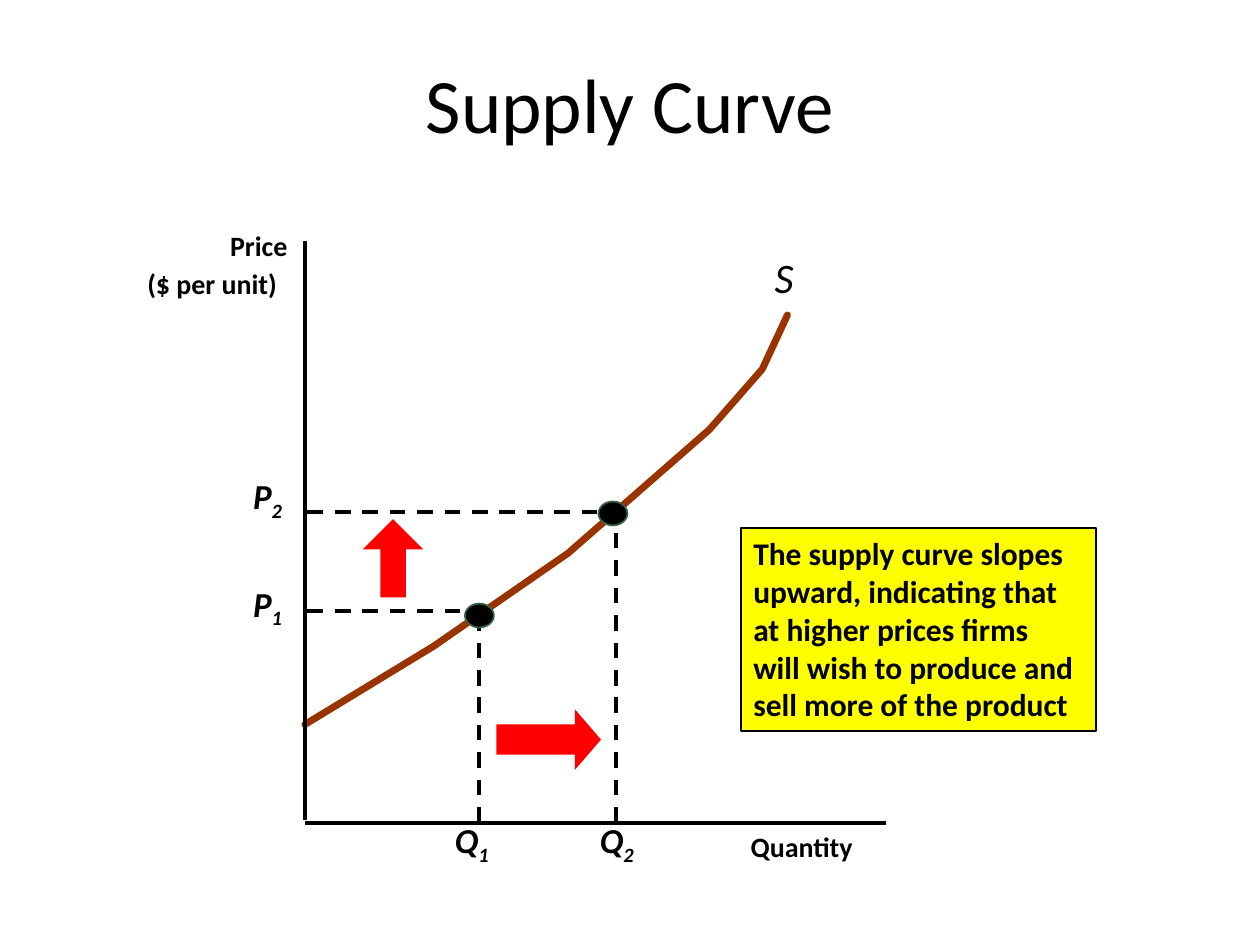
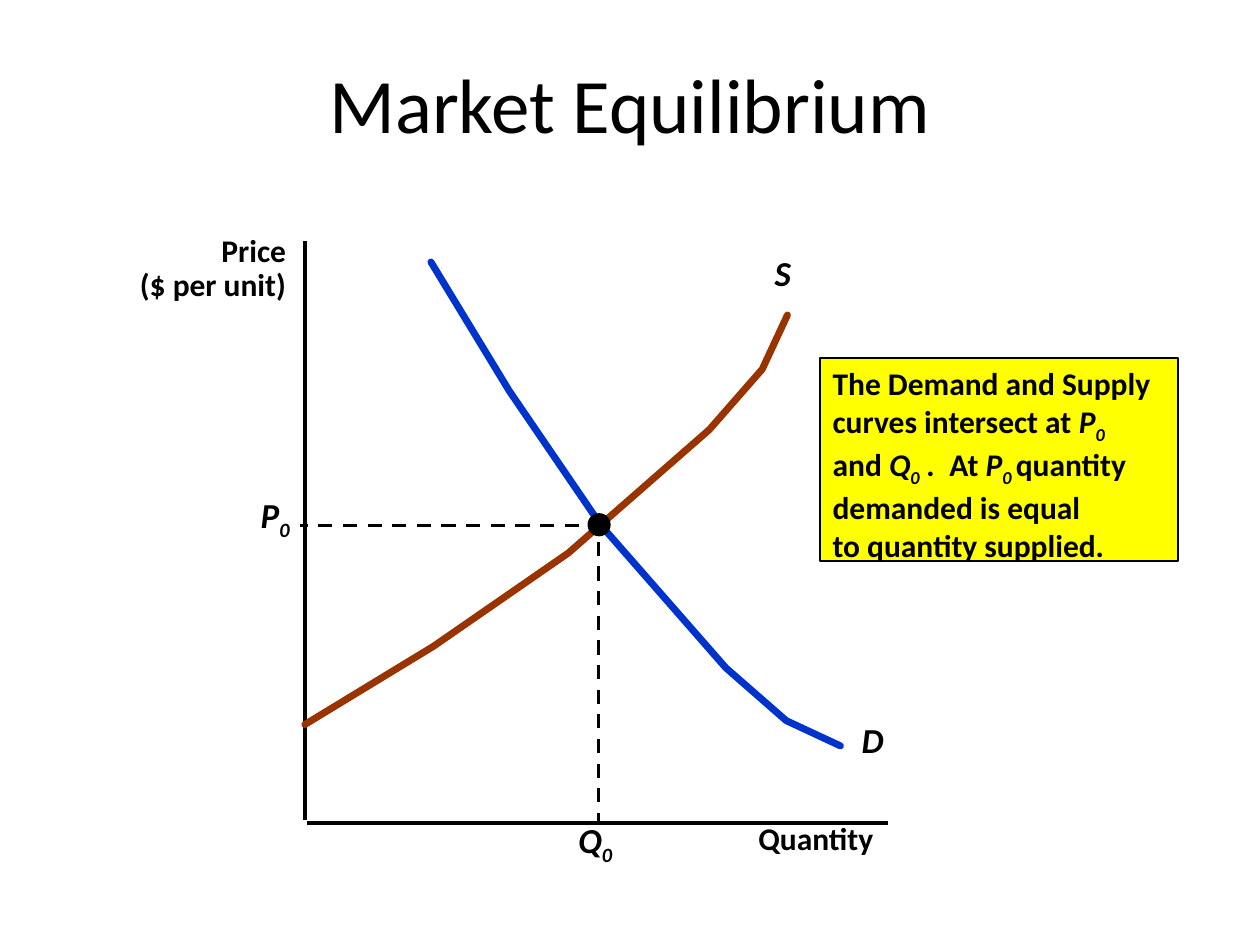
from dataclasses import dataclass

from lxml.etree import SubElement
from pptx import Presentation
from pptx.dml.color import RGBColor
from pptx.enum.dml import MSO_LINE
from pptx.enum.shapes import MSO_CONNECTOR, MSO_SHAPE
from pptx.enum.text import MSO_ANCHOR, MSO_AUTO_SIZE, PP_ALIGN
from pptx.oxml.ns import qn
from pptx.util import Inches, Pt

BLACK = RGBColor(0x00, 0x00, 0x00)
RED = RGBColor(0xFF, 0x00, 0x00)
YELLOW = RGBColor(0xFF, 0xFF, 0x00)
GREEN = RGBColor(0x37, 0x65, 0x46)
SUPPLY_BROWN = RGBColor(0x99, 0x33, 0x00)
DEMAND_BLUE = RGBColor(0x00, 0x33, 0xCC)

BODY = {"name": "Calibri", "size": Pt(18), "bold": True, "italic": False}
TITLE = BODY | {"size": Pt(44), "bold": False}
AXIS_SMALL = BODY | {"size": Pt(16)}
SYMBOL = BODY | {"size": Pt(20), "italic": True}
LIGHT_SYMBOL = SYMBOL | {"size": Pt(24), "bold": False}
SERIF_SPACE = (" ", {"name": "Times New Roman", "size": Pt(24), "bold": False})
VAR = {"italic": True}
SUB = {"italic": True, "baseline": "-25000"}

SUPPLY = [(0, 3.84), (1.02, 3.22), (2.09, 2.48), (3.21, 1.5), (3.63, 1.02), (3.83, 0.59)]
DEMAND = [(1, 0.17), (1.62, 1.19), (2.35, 2.26), (3.34, 3.39), (3.82, 3.81), (4.25, 4.01)]


@dataclass
class Box:
    left: float
    top: float
    width: float
    height: float

    def point(self, x, y):
        return Inches(self.left + x), Inches(self.top + y)

    def area(self, x, y, width, height):
        return *self.point(x, y), Inches(width), Inches(height)


TITLE_BOX = Box(0.5, 0.3, 9, 1.03)
GRAPH = Box(2.42, 1.91, 4.61, 4.62)


def write(frame, paragraphs, style, align=PP_ALIGN.LEFT, spacing=None):
    for index, runs in enumerate(paragraphs):
        paragraph = frame.paragraphs[0] if index == 0 else frame.add_paragraph()
        paragraph.alignment = align
        paragraph.line_spacing = spacing
        for text, changes in runs:
            run = paragraph.add_run()
            run.text = text
            run.font.color.rgb = BLACK
            for key, value in (style | changes).items():
                if key == "baseline":
                    run._r.get_or_add_rPr().set(key, value)
                else:
                    setattr(run.font, key, value)


def label(slide, place, paragraphs, style, align=PP_ALIGN.LEFT, spacing=None):
    frame = slide.shapes.add_textbox(*place).text_frame
    frame.word_wrap = False
    frame.auto_size = MSO_AUTO_SIZE.SHAPE_TO_FIT_TEXT
    write(frame, paragraphs, style, align, spacing)


def solid(slide, kind, place, fill, outline=None):
    shape = slide.shapes.add_shape(kind, *place)
    shape.shadow.inherit = False
    shape.fill.solid()
    shape.fill.fore_color.rgb = fill
    if outline is None:
        shape.line.fill.background()
    else:
        shape.line.color.rgb = outline
        shape.line.width = Pt(1)
    return shape


def straight(slide, box, start, end, weight, dash=None):
    line = slide.shapes.add_connector(
        MSO_CONNECTOR.STRAIGHT, *box.point(*start), *box.point(*end))
    SubElement(line._element.spPr, qn("a:effectLst"))
    line.line.color.rgb = BLACK
    line.line.width = Pt(weight)
    line.line.dash_style = dash


def axes(slide, box, gap=0):
    straight(slide, box, (0, 0), (0, box.height - 0.02), 2)
    straight(slide, box, (gap, box.height), (box.width + gap, box.height), 2)


def curve(slide, box, points, color):
    corners = [box.point(*point) for point in points]
    builder = slide.shapes.build_freeform(*corners[0])
    builder.add_line_segments(corners[1:], close=False)
    outline = builder.convert_to_shape()
    outline.shadow.inherit = False
    outline.fill.background()
    outline.line.color.rgb = color
    outline.line.width = Pt(4)
    outline.line._get_or_add_ln().set("cap", "rnd")


def callout(slide, box, paragraphs):
    note = solid(slide, MSO_SHAPE.RECTANGLE,
                 box.area(0, 0, box.width, box.height), YELLOW, BLACK)
    note.text_frame.word_wrap = True
    note.text_frame.vertical_anchor = MSO_ANCHOR.TOP
    write(note.text_frame, paragraphs, BODY)


def price_point(slide, box, index, guides, weight, dot, outline, price_at, quantity_x):
    for start, end in guides:
        straight(slide, box, start, end, weight, MSO_LINE.DASH)
    solid(slide, MSO_SHAPE.OVAL, box.area(*dot), BLACK, outline)
    label(slide, box.area(*price_at, 0.48, 0.43), [[("P", {}), (index, SUB)]], SYMBOL)
    label(slide, box.area(quantity_x, 4.54, 0.51, 0.43), [[("Q", {}), (index, SUB)]], SYMBOL)


def change_arrow(slide, box, kind, place, adjustments):
    arrow = solid(slide, kind, box.area(*place), RED)
    for index, value in enumerate(adjustments):
        arrow.adjustments[index] = value


def titled_slide(deck, text):
    slide = deck.slides.add_slide(deck.slide_layouts[5])
    title = slide.shapes.title
    box = TITLE_BOX
    title.left, title.top, title.width, title.height = box.area(0, 0, box.width, box.height)
    title.text_frame.vertical_anchor = MSO_ANCHOR.MIDDLE
    write(title.text_frame, [[(text, {})]], TITLE, PP_ALIGN.CENTER)
    return slide


def supply_slide(deck, box):
    slide = titled_slide(deck, "Supply Curve")
    curve(slide, box, SUPPLY, SUPPLY_BROWN)
    label(slide, box.area(3.63, 0.04, 0.42, 0.5), [[("S", {})]], LIGHT_SYMBOL)
    callout(slide, Box(5.88, 4.19, 2.82, 1.61), [[(line, {})] for line in (
        "The supply curve slopes", "upward, indicating that", "at higher prices firms",
        "will wish to produce and", "sell more of the product")])
    axes(slide, box)
    label(slide, box.area(3.44, 4.51, 1.18, 0.5),
          [[("Quantity", {}), SERIF_SPACE]], AXIS_SMALL)
    label(slide, box.area(-1.49, -0.09, 1.45, 0.64),
          [[("Price", {})], [("($ per unit)", {}), SERIF_SPACE]],
          AXIS_SMALL, PP_ALIGN.RIGHT, 0.8)
    price_point(slide, box, "1",
                [((0.02, 2.94), (1.46, 2.94)), ((1.38, box.height), (1.38, 2.98))],
                2.25, (1.27, 2.88, 0.23, 0.19), GREEN, (-0.51, 2.66), 1.09)
    price_point(slide, box, "2",
                [((0.02, 2.15), (2.52, 2.15)), ((2.47, box.height), (2.47, 2.12))],
                2.25, (2.33, 2.07, 0.23, 0.19), GREEN, (-0.51, 1.81), 2.24)
    change_arrow(slide, box, MSO_SHAPE.RIGHT_ARROW, (1.52, 3.72, 0.83, 0.48), (0.5, 0.43))
    change_arrow(slide, box, MSO_SHAPE.UP_ARROW, (0.46, 2.21, 0.48, 0.62), (0.42, 0.5))


def equilibrium_slide(deck, box):
    slide = titled_slide(deck, "Market Equilibrium")
    axes(slide, box, gap=0.02)
    label(slide, box.area(3.5, 4.51, 1.29, 0.43),
          [[("Quantity", {}), (" ", {"size": Pt(20)})]], BODY)
    curve(slide, box, DEMAND, DEMAND_BLUE)
    label(slide, box.area(4.32, 3.74, 0.4, 0.43), [[("D", {})]], SYMBOL)
    curve(slide, box, SUPPLY, SUPPLY_BROWN)
    label(slide, box.area(3.63, 0.04, 0.38, 0.43), [[("S", {})]], SYMBOL)
    callout(slide, Box(6.51, 2.84, 2.84, 1.61), [
        [("The Demand and Supply", {})],
        [("curves intersect at ", {}), ("P", VAR), ("0", SUB)],
        [("and ", {}), ("Q", VAR), ("0", SUB), (" .", VAR), ("  At ", {}),
         ("P", VAR), ("0 ", SUB), ("quantity", {})],
        [("demanded is equal", {})],
        [("to quantity supplied", {}), (".", VAR)],
    ])
    price_point(slide, box, "0",
                [((2.37, 2.26), (-0.04, 2.26)), ((2.33, 2.39), (2.33, 4.63))],
                2, (2.25, 2.17, 0.17, 0.17), BLACK, (-0.45, 1.96), 2.07)
    label(slide, box.area(-1.55, -0.09, 1.5, 0.67),
          [[("Price", {})], [("($ per unit)", {})]], BODY, PP_ALIGN.RIGHT, 0.9)


def main():
    deck = Presentation()
    deck.slide_width, deck.slide_height = Inches(10), Inches(7.5)
    supply_slide(deck, GRAPH)
    equilibrium_slide(deck, GRAPH)
    deck.save("out.pptx")


if __name__ == "__main__":
    main()
